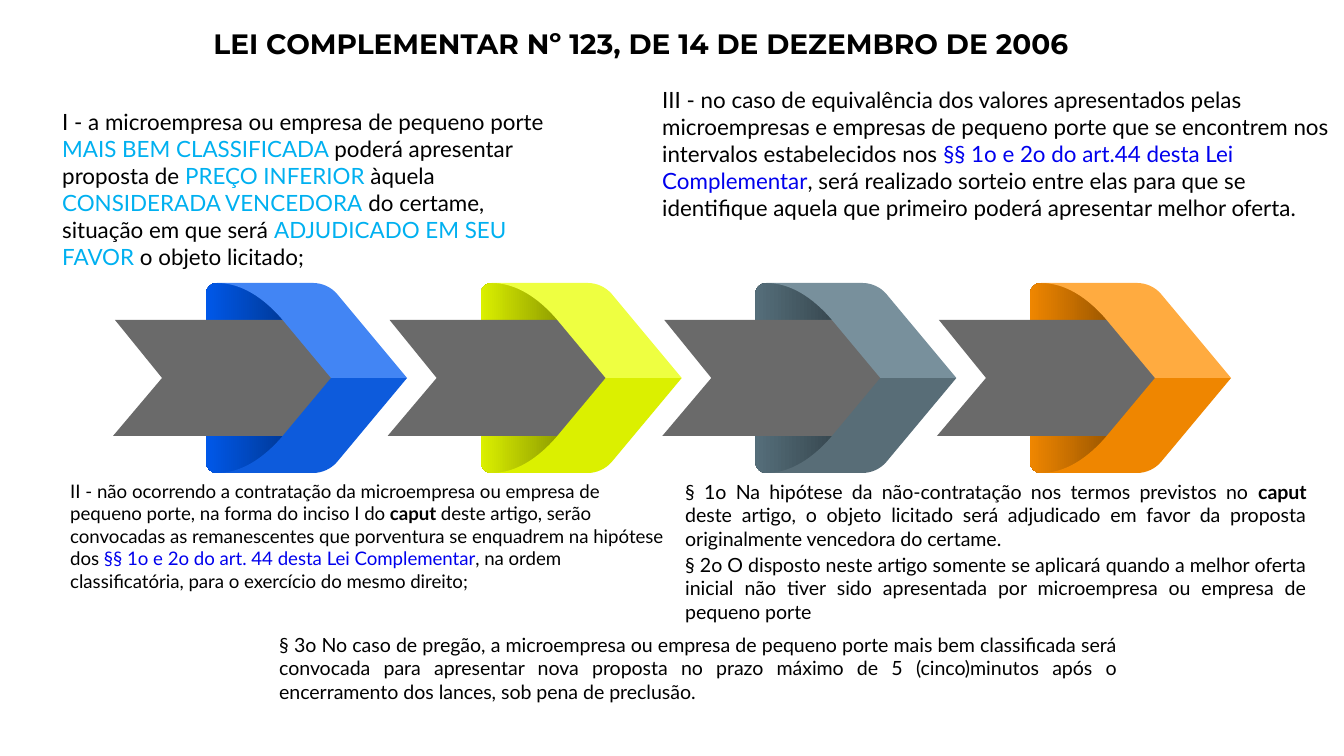
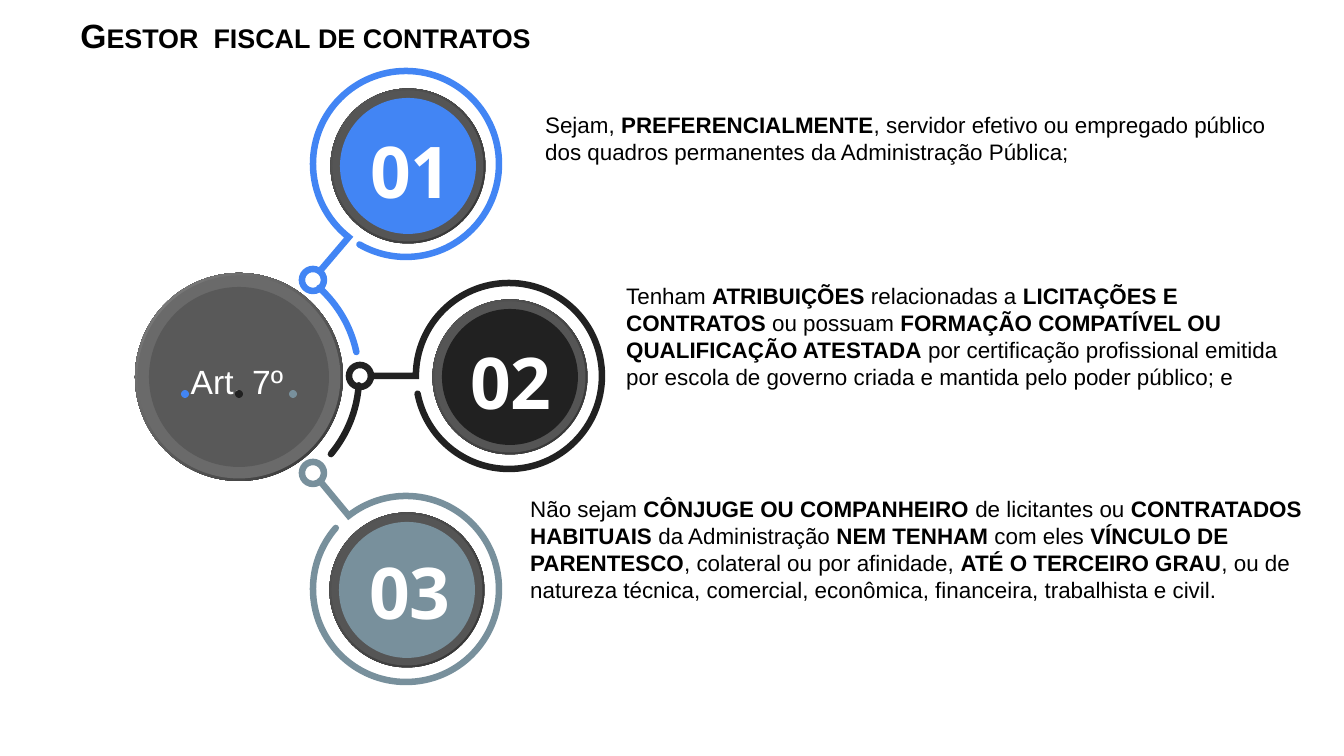
import math
from pptx import Presentation
from pptx import util as u
from pptx.dml.color import RGBColor
from pptx.enum import shapes, text
from pptx.oxml.ns import qn
from lxml import etree

PX = 914400 / 134.4
BLACK, WHITE, BLUE, GREY, DARK = "000000", "FFFFFF", "4285F4", "78909C", "212121"
BOLD = {"bold": True}
CYAN = {"color": "00B0F0"}
LINK = {"color": "0000ED"}
LEFT, CENTER, JUSTIFY = text.PP_ALIGN.LEFT, text.PP_ALIGN.CENTER, text.PP_ALIGN.JUSTIFY

LAW_TITLE = "LEI COMPLEMENTAR Nº 123, DE 14 DE DEZEMBRO DE 2006"
LAW_TEXTS = [
    ((49, 102, 528, 176), 12, LEFT, [
        "I - a microempresa ou empresa de pequeno porte ",
        ("MAIS BEM CLASSIFICADA ", CYAN),
        "poderá apresentar proposta de ",
        ("PREÇO INFERIOR", CYAN),
        " àquela ",
        ("CONSIDERADA VENCEDORA", CYAN),
        " do certame, situação em que será ",
        ("ADJUDICADO EM SEU FAVOR ", CYAN),
        "o objeto licitado;"]),
    ((57, 473, 622, 126), 10, LEFT, [
        "II - não ocorrendo a contratação da microempresa ou empresa de pequeno porte, "
        "na forma do inciso I do ",
        ("caput ", BOLD),
        "deste artigo, serão convocadas as remanescentes que porventura se enquadrem "
        "na hipótese dos ",
        ("§§ 1o e 2o do art. 44 desta Lei Complementar", LINK),
        ", na ordem classificatória, para o exercício do mesmo direito;"]),
    ((649, 80, 695, 176), 12, LEFT, [
        "III - no caso de equivalência dos valores apresentados pelas microempresas e "
        "empresas de pequeno porte que se encontrem nos intervalos estabelecidos nos ",
        ("§§ 1o e 2o do art.44 desta Lei Complementar", LINK),
        ", será realizado sorteio entre elas para que se identifique aquela que primeiro "
        "poderá apresentar melhor oferta."]),
    ((672, 473, 648, 85), 10.5, JUSTIFY, [
        "§ 1o Na hipótese da não-contratação nos termos previstos no ",
        ("caput ", BOLD),
        "deste artigo, o objeto licitado será adjudicado em favor da proposta "
        "originalmente vencedora do certame."]),
    ((672, 546, 648, 85), 10.5, JUSTIFY, [
        "§ 2o O disposto neste artigo somente se aplicará quando a melhor oferta inicial "
        "não tiver sido apresentada por microempresa ou empresa de pequeno porte"]),
    ((266, 626, 865, 85), 10.5, JUSTIFY, [
        "§ 3o No caso de pregão, a microempresa ou empresa de pequeno porte mais bem "
        "classificada será convocada para apresentar nova proposta no prazo máximo de "
        "5 (cinco)minutos após o encerramento dos lances, sob pena de preclusão."]),
]

ARROW_COLORS = [
    ("00348A", "0058E9", BLUE, "0D5BDC"),
    ("818E00", "DBF000", "EEFF41", "DBF000"),
    ("324148", "556E7A", GREY, "586D77"),
    ("8E4F00", "EF8600", "FFAB40", "EF8600"),
]
ARROW_FIRST, ARROW_LAST, ARROW_MIDDLE = 113, 937, 378
FOLD = [(93, -84), (93, 84), (93, 90, 98, 95, 104, 95), (191, 95), (275, 0),
        (191, -95), (104, -95), (98, -95, 93, -90, 93, -84)]
TAIL = [(2, -58), (49, 0), (0, 58), (230, 58), (230, -58)]
WING = [(294, 0), (224, -84), (218, -91, 209, -95, 200, -95), (104, -95),
        (123, -95, 145, -86, 168, -60), (218, 0)]

MANAGER_TITLE = "Gestor  fiscal de contratos"
HUB, HUB_ARC = (239, 377), 120
RING = 93
BADGES = [
    {"number": "01", "color": BLUE, "center": (408, 166), "ring": (406, 164),
     "node": (313, 280), "link": (320, 271), "sweep": (128, 480), "hub_sweep": (-48, -12),
     "number_at": (370, 127), "box": (532, 105, 754, 67), "runs": [
         "Sejam, ", ("PREFERENCIALMENTE", BOLD),
         ", servidor efetivo ou empregado público dos quadros permanentes da "
         "Administração Pública;"]},
    {"number": "02", "color": DARK, "center": (510, 377), "ring": (509, 376),
     "node": (360, 376), "link": (371, 376), "sweep": (180, 529), "hub_sweep": (4, 40),
     "number_at": (470, 338), "box": (613, 276, 714, 122), "runs": [
         "Tenham ", ("ATRIBUIÇÕES", BOLD), " relacionadas a ",
         ("LICITAÇÕES E CONTRATOS", BOLD), " ou possuam ",
         ("FORMAÇÃO COMPATÍVEL OU QUALIFICAÇÃO ATESTADA", BOLD),
         " por certificação profissional emitida por escola de governo criada e mantida "
         "pelo poder público; e"]},
    {"number": "03", "color": GREY, "center": (407, 590), "ring": (406, 589),
     "node": (313, 473), "link": (320, 481), "sweep": (232, 581), "hub_sweep": None,
     "number_at": (369, 548), "box": (517, 489, 810, 122), "runs": [
         "Não sejam ", ("CÔNJUGE OU COMPANHEIRO", BOLD), " de licitantes ou ",
         ("CONTRATADOS HABITUAIS", BOLD), " da Administração ", ("NEM TENHAM", BOLD),
         " com eles ", ("VÍNCULO DE PARENTESCO", BOLD),
         ", colateral ou por afinidade, ", ("ATÉ O TERCEIRO GRAU", BOLD),
         ", ou de natureza técnica, comercial, econômica, financeira, trabalhista e "
         "civil."]},
]


def px(value):
    return u.Emu(round(value * PX))


def rgb(color):
    return RGBColor.from_string(color)


def write(box, runs, size, font, color=BLACK, bold=False, align=LEFT, wrap=True,
          margins=True, small_caps=False):
    frame = box.text_frame
    frame.word_wrap = wrap
    frame.auto_size = text.MSO_AUTO_SIZE.SHAPE_TO_FIT_TEXT
    frame.vertical_anchor = text.MSO_ANCHOR.TOP
    if not margins:
        frame.margin_left = frame.margin_right = frame.margin_top = frame.margin_bottom = 0
    para = frame.paragraphs[0]
    para.alignment = align
    for run in runs:
        words, style = (run, {}) if isinstance(run, str) else run
        span = para.add_run()
        span.text = words
        span.font.size = u.Pt(size)
        span.font.name = font
        span.font.bold = style.get("bold", bold)
        span.font.color.rgb = rgb(style.get("color", color))
        if small_caps:
            span.font._element.set("cap", "small")


def add_text(page, area, runs, **style):
    box = page.shapes.add_textbox(*map(px, area))
    write(box, runs, **style)
    return box


def set_title(page, area, words, **style):
    title = page.shapes.title
    title.left, title.top, title.width, title.height = map(px, area)
    write(title, [words], bold=True, **style)


def paint(shape, fill=None, line=None, angle=0, start=0):
    shape.shadow.inherit = False
    if fill is None:
        shape.fill.background()
    elif isinstance(fill, tuple):
        shape.fill.gradient()
        shape.fill.gradient_angle = angle
        for stop, color, position in zip(shape.fill.gradient_stops, fill, (start, 1)):
            stop.color.rgb = rgb(color)
            stop.position = position
    else:
        shape.fill.solid()
        shape.fill.fore_color.rgb = rgb(fill)
    if line is None:
        shape.line.fill.background()
    else:
        shape.line.color.rgb = rgb(line)
        shape.line.width = u.Pt(3.5)
        outline = shape._element.spPr.find(qn("a:ln"))
        outline.set("cap", "rnd")
        etree.SubElement(outline, qn("a:miter")).set("lim", "800000")
    return shape


def add_circle(page, center, diameter, **style):
    corner = [px(c - diameter / 2) for c in center]
    circle = page.shapes.add_shape(shapes.MSO_SHAPE.OVAL, *corner, px(diameter), px(diameter))
    return paint(circle, **style)


def pairs(part):
    return list(zip(part[::2], part[1::2]))


def add_outline(page, outline, close=True, **style):
    points = [(px(x), px(y)) for part in outline for x, y in pairs(part)]
    builder = page.shapes.build_freeform(*points[0], scale=1.0)
    builder.add_line_segments(points[1:], close=close)
    shape = builder.convert_to_shape()
    segments = iter(list(shape._element.iter(qn("a:lnTo"))))
    for part in outline[1:]:
        segment = next(segments)
        if len(part) == 6:
            curve = etree.Element(qn("a:cubicBezTo"))
            segment.addprevious(curve)
            for piece in (segment, next(segments), next(segments)):
                curve.append(piece[0])
                piece.getparent().remove(piece)
    return paint(shape, **style)


def arc(center, radius, sweep):
    first, last = sweep
    turns = range(math.floor(first / 90) + 1, math.ceil(last / 90))
    stops = [math.radians(a) for a in (first, *(90 * turn for turn in turns), last)]

    def at(angle, pull=0):
        cos, sin = math.cos(angle), math.sin(angle)
        return (center[0] + radius * (cos - pull * sin),
                center[1] + radius * (sin + pull * cos))

    outline = [at(stops[0])]
    for begin, end in zip(stops, stops[1:]):
        pull = 4 / 3 * math.tan((end - begin) / 4)
        outline.append(at(begin, pull) + at(end, -pull) + at(end))
    return outline


def add_arrow(page, left, colors):
    shade, edge, upper, lower = colors

    def place(outline, flip=1):
        return [tuple(value for x, y in pairs(part)
                      for value in (left + x, ARROW_MIDDLE + flip * y))
                for part in outline]

    page.shapes.add_group_shape([
        add_outline(page, place(FOLD), fill=(shade, edge), angle=180, start=0.49),
        add_outline(page, place(TAIL), fill="6A6A6A"),
        add_outline(page, place(WING), fill=upper),
        add_outline(page, place(WING, -1), fill=lower)])


def add_link(page, badge):
    color = badge["color"]
    parts = []
    if badge["hub_sweep"]:
        parts.append(add_outline(page, arc(HUB, HUB_ARC, badge["hub_sweep"]),
                                 close=False, line=color))
    ring = [badge["link"]] + arc(badge["ring"], RING, badge["sweep"])
    parts.append(add_outline(page, ring, close=False, line=color))
    parts.append(add_circle(page, badge["node"], 22, line=color))
    page.shapes.add_group_shape(parts)


def add_disc(page, center, diameters, rim, face, core):
    fills = (("353535", rim), face, core)
    page.shapes.add_group_shape([
        add_circle(page, center, diameter, fill=fill, angle=135)
        for diameter, fill in zip(diameters, fills)])


def build_law(page):
    pitch = (ARROW_LAST - ARROW_FIRST) / (len(ARROW_COLORS) - 1)
    for index, colors in enumerate(ARROW_COLORS):
        add_arrow(page, ARROW_FIRST + index * pitch, colors)
    set_title(page, (200, 20, 995, 47), LAW_TITLE, size=15, font="Montserrat")
    for area, size, align, runs in LAW_TEXTS:
        add_text(page, area, runs, size=size, font="Lato", align=align)


def build_manager(page):
    centered = {"color": WHITE, "align": CENTER, "wrap": False, "margins": False}
    for badge in reversed(BADGES):
        add_link(page, badge)
    for badge in reversed(BADGES):
        add_disc(page, badge["center"], (155, 151, 136), "595959", "555555", badge["color"])
    add_disc(page, HUB, (208, 203, 180), "828282", "6A6A6A", "595959")
    label = add_text(page, (190, 361, 94, 40), ["Art. 7º"], size=18, font="Arial", **centered)
    dots = [add_circle(page, (HUB[0] + 54 * step, 394), 8, fill=badge["color"])
            for step, badge in zip((-1, 0, 1), BADGES)]
    page.shapes.add_group_shape([label] + dots)
    for badge in BADGES:
        add_text(page, (*badge["number_at"], 82, 86), [badge["number"]], size=38.2,
                 font="Open Sans", bold=True, **centered)
    for badge in BADGES:
        add_text(page, badge["box"], badge["runs"], size=12, font="Arial")
    set_title(page, (67, 8, 831, 54), MANAGER_TITLE, size=18, font="Arial", align=JUSTIFY,
              small_caps=True)


def main():
    deck = Presentation()
    deck.slide_width, deck.slide_height = px(1344), px(756)
    for build in (build_law, build_manager):
        build(deck.slides.add_slide(deck.slide_layouts[5]))
    deck.save("out.pptx")


if __name__ == "__main__":
    main()
